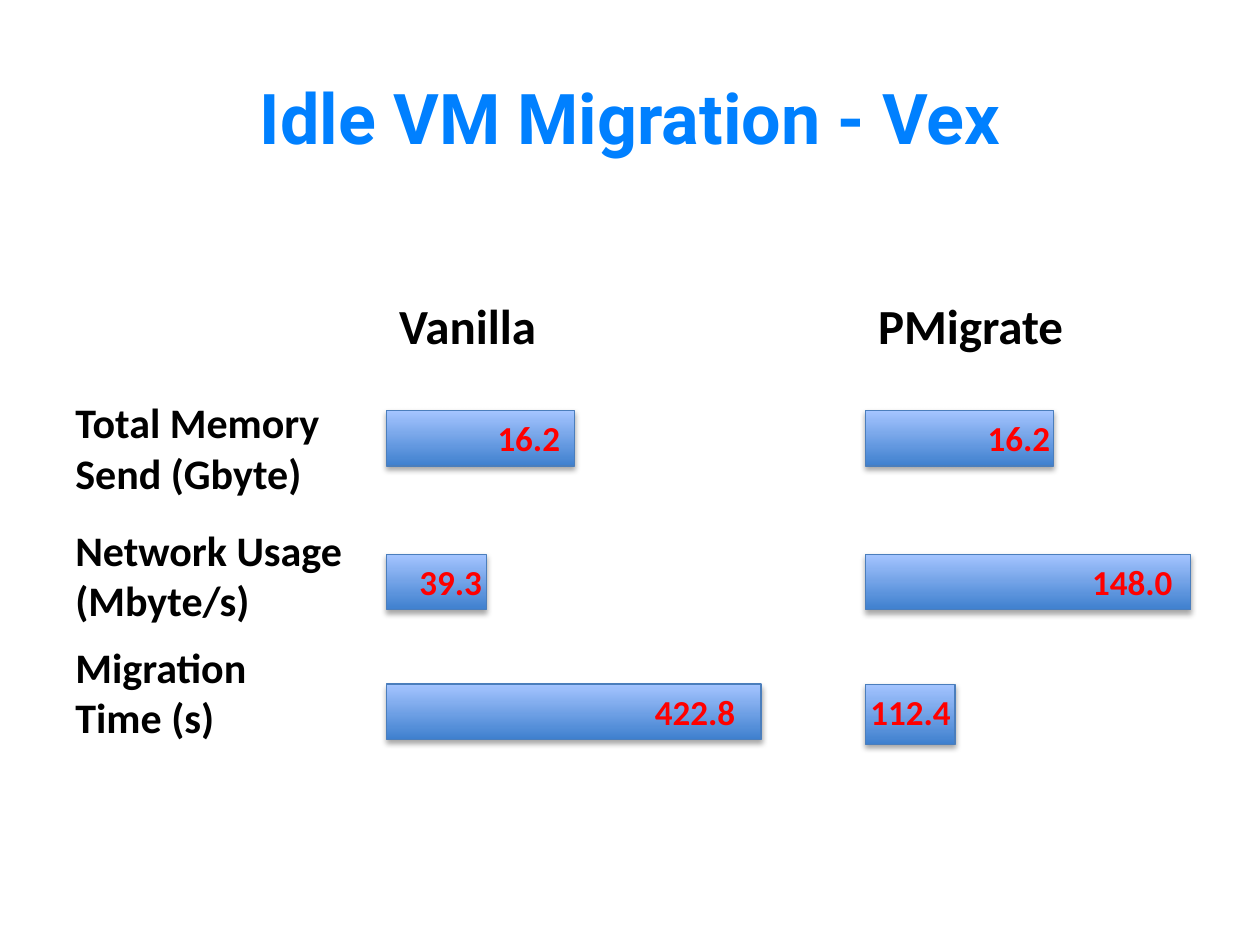
from lxml.etree import SubElement
from pptx import Presentation
from pptx.dml.color import RGBColor
from pptx.enum.shapes import MSO_SHAPE as Preset
from pptx.enum.text import MSO_ANCHOR as Anchor, MSO_AUTO_SIZE as AutoSize, PP_ALIGN as Align
from pptx.oxml.ns import qn
from pptx.util import Inches, Pt

COLORS = {"title": "0080FF", "text": "000000", "value": "FF0000",
          "bar_dark": "3F80CE", "bar_light": "A4C4FF", "bar_line": "4B7EBC", "shadow": "000000"}
FORMATS = {
    "title": {"name": "Roboto", "size": Pt(40), "bold": True},
    "heading": {"name": "Calibri", "size": Pt(28), "bold": True},
    "label": {"name": "Calibri", "size": Pt(24), "bold": True},
    "value": {"name": "Calibri", "size": Pt(20), "bold": True},
}
LABEL_LEFT, HEADING_TOP, BAR_HEIGHT = 0.5, 2.3, 0.44
COLUMNS = {"Vanilla": 3.07, "PMigrate": 6.87}
ROWS = [
    {"label": "Total Memory Send (Gbyte)", "label_box": (3.1, 2.19), "bar_top": 3.26},
    {"label": "Network Usage\n(Mbyte/s)", "label_box": (4.11, 2.6), "bar_top": 4.4},
    {"label": "Migration Time (s)", "label_box": (5.04, 2.19), "bar_top": 5.43},
]
BARS = {
    "Vanilla": [("16.2", 1.49, BAR_HEIGHT, 0.78, 0.71),
                ("39.3", 0.79, BAR_HEIGHT, 0.16, 0.71),
                ("422.8", 2.97, BAR_HEIGHT, 2.03, 1)],
    "PMigrate": [("16.2", 1.49, BAR_HEIGHT, 0.87, 0.71),
                 ("148.0", 2.58, BAR_HEIGHT, 1.7, 0.88),
                 ("112.4", 0.71, 0.48, -0.06, 0.97)],
}


def color(key):
    """Return the named colour."""
    return RGBColor.from_string(COLORS[key])


def write(frame, text, style, color_key, align=Align.LEFT):
    """Fill a text frame and format all its paragraphs."""
    frame.text = text
    for paragraph in frame.paragraphs:
        paragraph.alignment = align
        for run in paragraph.runs:
            for attribute, value in FORMATS[style].items():
                setattr(run.font, attribute, value)
            run.font.color.rgb = color(color_key)


def add_text(shapes, box, text, style, color_key="text"):
    """Add a wrapping text box."""
    frame = shapes.add_textbox(*map(Inches, box)).text_frame
    frame.word_wrap = True
    frame.auto_size = AutoSize.SHAPE_TO_FIT_TEXT
    write(frame, text, style, color_key)


def add_shadow(shape):
    """Give a shape a soft shadow below it."""
    shape.shadow.inherit = False
    effects = shape._element.spPr.find(qn("a:effectLst"))
    outer = SubElement(effects, qn("a:outerShdw"), blurRad="40000", dist="23000",
                       dir="5400000", rotWithShape="0")
    tint = SubElement(outer, qn("a:srgbClr"), val=COLORS["shadow"])
    SubElement(tint, qn("a:alpha"), val="35000")


def add_bar(slide, left, top, value, width, height, value_offset, value_width):
    """Add a grouped gradient bar and its value."""
    shapes = slide.shapes.add_group_shape().shapes
    bar = shapes.add_shape(Preset.RECTANGLE, *map(Inches, (left, top, width, height)))
    bar.fill.gradient()
    bar.fill.gradient_angle = 90
    for stop, key, position in zip(bar.fill.gradient_stops, ("bar_dark", "bar_light"), (0, 1)):
        stop.color.rgb = color(key)
        stop.position = position
    bar.line.color.rgb = color("bar_line")
    bar.line.width = Pt(0.75)
    add_shadow(bar)
    add_text(shapes, (left + value_offset, top, value_width, BAR_HEIGHT), value, "value", "value")


def add_title(slide, box, text):
    """Place and format the title placeholder."""
    title = slide.shapes.title
    title.left, title.top, title.width, title.height = map(Inches, box)
    title.text_frame.vertical_anchor = Anchor.MIDDLE
    write(title.text_frame, text, "title", "title", Align.CENTER)


def add_labels(slide, left):
    """Add the measure names down the left side."""
    for row in ROWS:
        top, width = row["label_box"]
        add_text(slide.shapes, (left, top, width, 0.91), row["label"], "label")


def add_column(slide, left, heading):
    """Add one system's heading and its bars."""
    add_text(slide.shapes, (left, HEADING_TOP, 2.19, 0.57), heading, "heading")
    for row, bar in zip(ROWS, BARS[heading]):
        add_bar(slide, left, row["bar_top"], *bar)


def main():
    """Build and save the slide."""
    presentation = Presentation()
    presentation.slide_width, presentation.slide_height = Inches(10), Inches(7.5)
    slide = presentation.slides.add_slide(presentation.slide_layouts[5])
    add_title(slide, (0.5, 0.3, 9, 1.25), "Idle VM Migration - Vex")
    add_labels(slide, LABEL_LEFT)
    for heading, left in COLUMNS.items():
        add_column(slide, left, heading)
    presentation.save("out.pptx")


if __name__ == "__main__":
    main()
